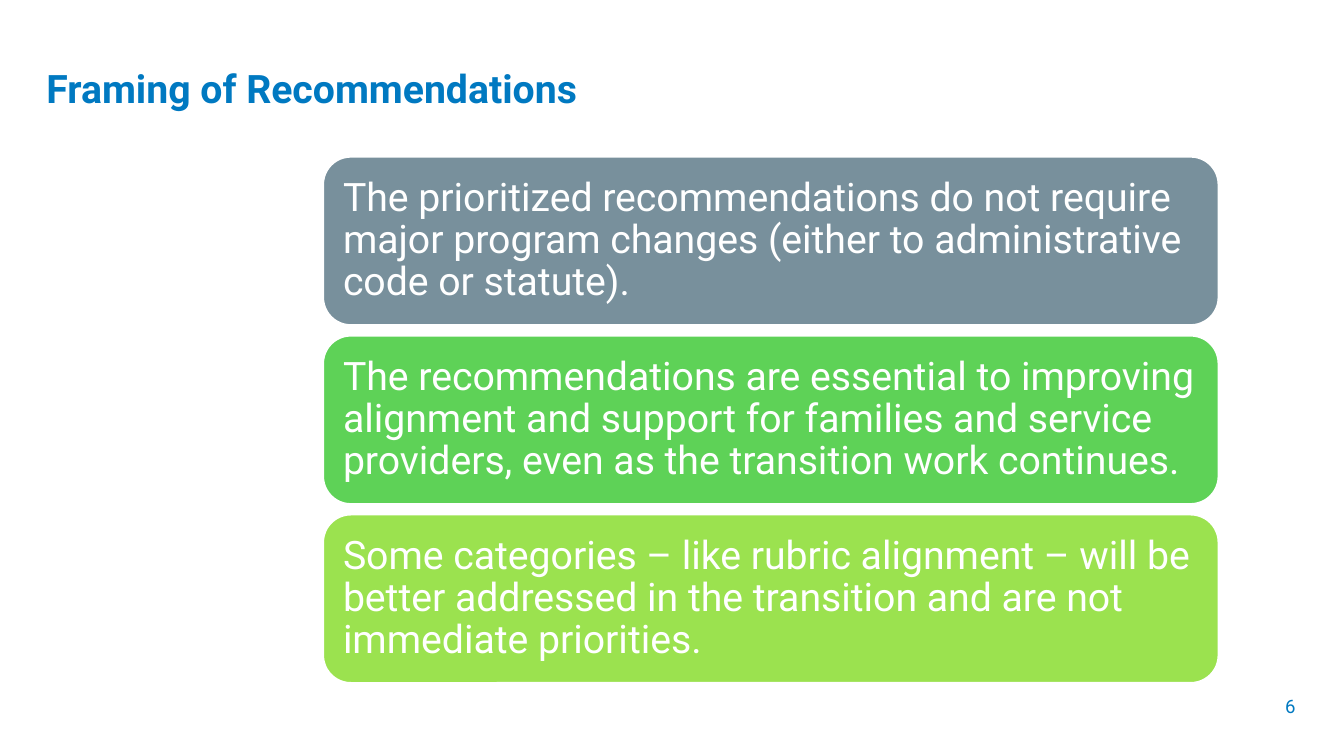
from pptx import Presentation
from pptx.dml.color import RGBColor
from pptx.enum.shapes import MSO_SHAPE
from pptx.enum.text import MSO_ANCHOR, PP_ALIGN
from pptx.util import Inches, Pt

COLORS = {
    "accent": "0079C1",
    "white": "FFFFFF",
    "slate": "78909C",
    "green": "5ED257",
    "lime": "9BE24F",
}
FONT = "Roboto"
RECOMMENDATIONS = [
    ("slate", "The prioritized recommendations do not require major program "
              "changes (either to administrative code or statute)."),
    ("green", "The recommendations are essential to improving alignment and support "
              "for families and service providers, even as the transition work continues."),
    ("lime", "Some categories – like rubric alignment – will be better addressed "
             "in the transition and are not immediate priorities."),
]


def rgb(name):
    return RGBColor.from_string(COLORS[name])


def write(shape, text, size, color, inset, anchor, align=PP_ALIGN.LEFT, bold=False):
    """Fill a shape with one styled paragraph and return the paragraph."""
    frame = shape.text_frame
    frame.word_wrap = True
    frame.vertical_anchor = anchor
    frame.margin_left = frame.margin_right = Inches(inset)
    frame.margin_top = frame.margin_bottom = Inches(inset)
    paragraph = frame.paragraphs[0]
    paragraph.text = text
    paragraph.alignment = align
    font = paragraph.font
    font.name, font.size, font.bold = FONT, Pt(size), bold
    font.color.rgb = rgb(color)
    return paragraph


def add_title(slide, left, top, width, height, text):
    title = slide.shapes.add_textbox(*map(Inches, (left, top, width, height)))
    write(title, text, 28, "accent", 0.13, MSO_ANCHOR.TOP, bold=True)


def add_page_number(slide, left, top, width, height, number):
    page_number = slide.shapes.add_textbox(*map(Inches, (left, top, width, height)))
    paragraph = write(page_number, number, 13.3, "accent", 0.13,
                      MSO_ANCHOR.MIDDLE, PP_ALIGN.RIGHT)
    paragraph.line_spacing = 1.15
    paragraph.space_before = Pt(9.3)


def add_recommendations(slide, left, top, width, height, gap=0.095):
    """Stack equal rounded cards down the given box."""
    count = len(RECOMMENDATIONS)
    card_height = (height - gap * (count - 1)) / count
    for row, (color, text) in enumerate(RECOMMENDATIONS):
        card_top = top + row * (card_height + gap)
        card = slide.shapes.add_shape(
            MSO_SHAPE.ROUNDED_RECTANGLE,
            *map(Inches, (left, card_top, width, card_height)))
        card.shadow.inherit = False
        card.fill.solid()
        card.fill.fore_color.rgb = rgb(color)
        card.line.color.rgb = rgb("white")
        card.line.width = Pt(2)
        paragraph = write(card, text, 28, "white", 0.12, MSO_ANCHOR.MIDDLE)
        paragraph.line_spacing = 0.9


def main():
    presentation = Presentation()
    presentation.slide_width = Inches(13.33)
    presentation.slide_height = Inches(7.5)
    slide = presentation.slides.add_slide(presentation.slide_layouts[6])

    # Heading
    add_title(slide, 0.33, 0.51, 8.63, 1.47, "Framing of Recommendations")
    # Recommendation cards
    add_recommendations(slide, 3.2, 1.55, 8.89, 5.23)
    # Footer
    add_page_number(slide, 6.77, 6.7, 6.21, 0.57, "6")

    presentation.save("out.pptx")


if __name__ == "__main__":
    main()
